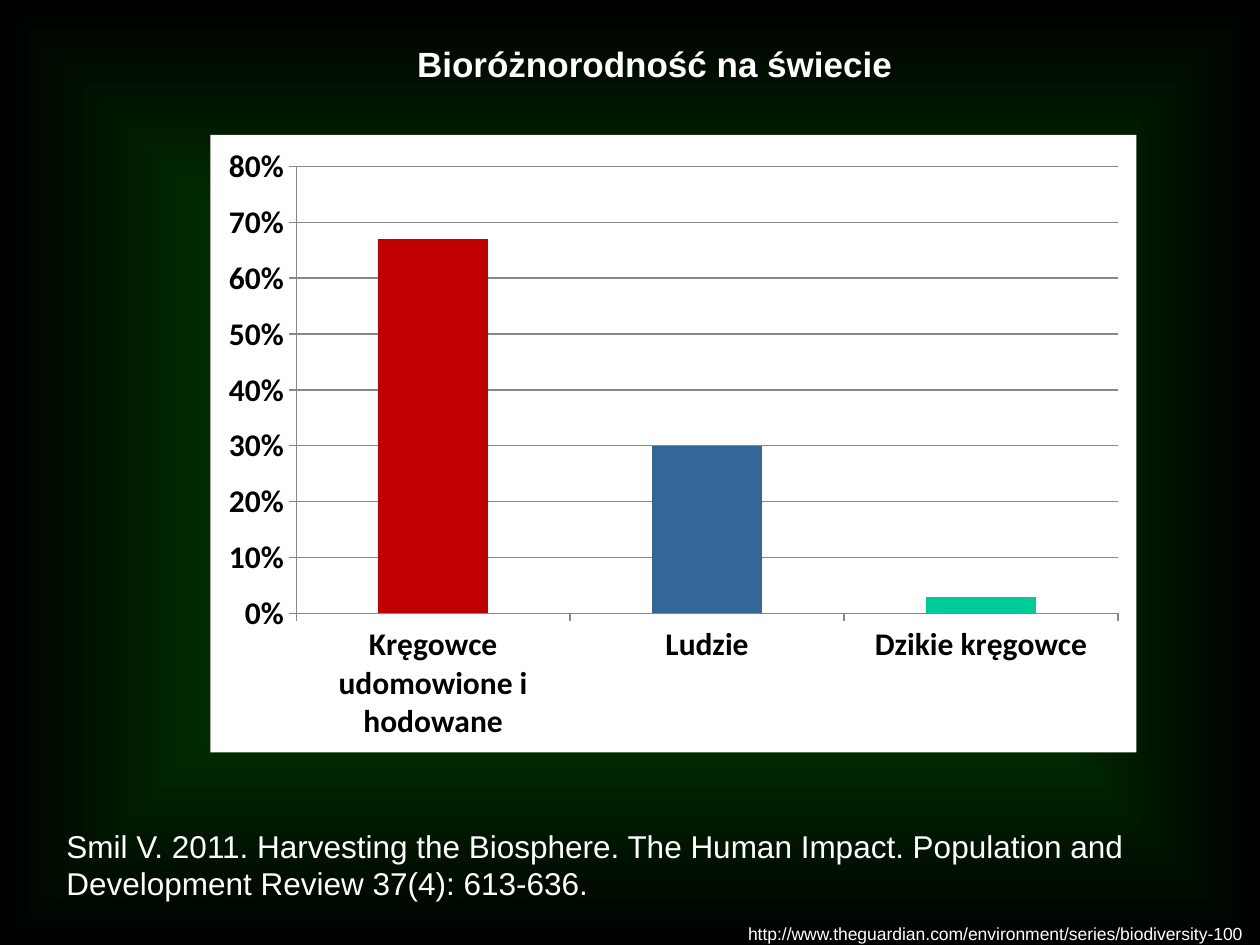
from pptx import Presentation
from pptx.chart.data import CategoryChartData
from pptx.dml.color import RGBColor
from pptx.enum.chart import XL_CHART_TYPE, XL_TICK_MARK
from pptx.enum.text import MSO_AUTO_SIZE, PP_ALIGN
from pptx.oxml import parse_xml
from pptx.oxml.ns import nsdecls, qn
from pptx.util import Cm, Pt

WHITE = RGBColor(0xFF, 0xFF, 0xFF)
BLACK = RGBColor(0, 0, 0)
GREEN = RGBColor(0, 0x66, 0)
GREY = RGBColor(0x87, 0x87, 0x87)
RED = RGBColor(0xC0, 0, 0)
BLUE = RGBColor(0x33, 0x66, 0x99)
MINT = RGBColor(0, 0xCC, 0x99)

SHARES = {
    "Kręgowce udomowione i hodowane": (0.67, RED),
    "Ludzie": (0.3, BLUE),
    "Dzikie kręgowce": (0.03, MINT),
}


def paint_back(slide):
    """Fill the background with a gradient from a green centre to black edges."""
    fill = slide.background.fill
    fill.gradient()
    for stop, color in zip(fill.gradient_stops, (GREEN, BLACK)):
        stop.color.rgb = color
    line = slide.element.find(".//" + qn("a:lin"))
    line.getparent().replace(line, parse_xml(
        f'<a:path {nsdecls("a")} path="shape">'
        '<a:fillToRect l="50000" t="50000" r="50000" b="50000"/></a:path>'))


def add_text(slide, box, text, size, bold=False, align=PP_ALIGN.LEFT, wrap=True):
    frame = slide.shapes.add_textbox(*map(Cm, box)).text_frame
    frame.word_wrap = wrap
    frame.auto_size = MSO_AUTO_SIZE.SHAPE_TO_FIT_TEXT
    para = frame.paragraphs[0]
    para.text = text
    para.alignment = align
    font = para.font
    font.name, font.size, font.bold = "Arial", Pt(size), bold
    font.color.rgb = WHITE


def style_axis(axis):
    axis.major_tick_mark = XL_TICK_MARK.OUTSIDE
    axis.minor_tick_mark = XL_TICK_MARK.NONE
    axis.format.line.color.rgb = GREY
    font = axis.tick_labels.font
    font.name, font.size, font.bold = "Calibri", Pt(18), True
    font.color.rgb = BLACK


def add_bars(slide, box):
    data = CategoryChartData(number_format="0%")
    data.categories = list(SHARES)
    data.add_series("Series 1", [share for share, _ in SHARES.values()])
    chart = slide.shapes.add_chart(
        XL_CHART_TYPE.COLUMN_STACKED, *map(Cm, box), data).chart
    chart.has_legend = False
    chart.has_title = False
    chart.font.name, chart.font.size = "Times New Roman", Pt(18)
    chart.font.color.rgb = BLACK

    # The white panel behind the chart
    chart.element.find(qn("c:txPr")).addprevious(parse_xml(
        f'<c:spPr {nsdecls("c", "a")}><a:solidFill><a:srgbClr val="{WHITE}"/>'
        '</a:solidFill><a:ln><a:noFill/></a:ln></c:spPr>'))

    style_axis(chart.category_axis)
    values = chart.value_axis
    style_axis(values)
    values.minimum_scale, values.maximum_scale, values.major_unit = 0, 0.8, 0.1
    values.tick_labels.number_format = "0%"
    values.tick_labels.number_format_is_linked = False
    values.has_major_gridlines = True
    values.major_gridlines.format.line.color.rgb = GREY

    plot = chart.plots[0]
    plot.gap_width, plot.overlap, plot.vary_by_categories = 150, 100, False
    bars = plot.series[0]
    bars.format.fill.solid()
    bars.format.fill.fore_color.rgb = MINT
    for i, (_, color) in enumerate(SHARES.values()):
        if color != MINT:
            fill = bars.points[i].format.fill
            fill.solid()
            fill.fore_color.rgb = color


def main():
    deck = Presentation()
    deck.slide_width, deck.slide_height = Cm(25.4), Cm(19.05)
    slide = deck.slides.add_slide(deck.slide_layouts[6])
    paint_back(slide)
    add_text(slide, (1.09, 16.54, 22.8, 1.8),
             "Smil V. 2011. Harvesting the Biosphere. The Human Impact. "
             "Population and Development Review 37(4): 613-636.", 18)
    add_text(slide, (14.83, 18.49, 10.57, 0.69),
             "http://www.theguardian.com/environment/series/biodiversity-100",
             10, wrap=False)
    add_bars(slide, (4.24, 2.72, 18.67, 12.45))
    add_text(slide, (7.7, 0.74, 11, 1.12), "Bioróżnorodność na świecie",
             20, bold=True, align=PP_ALIGN.CENTER)
    deck.save("out.pptx")


if __name__ == "__main__":
    main()
